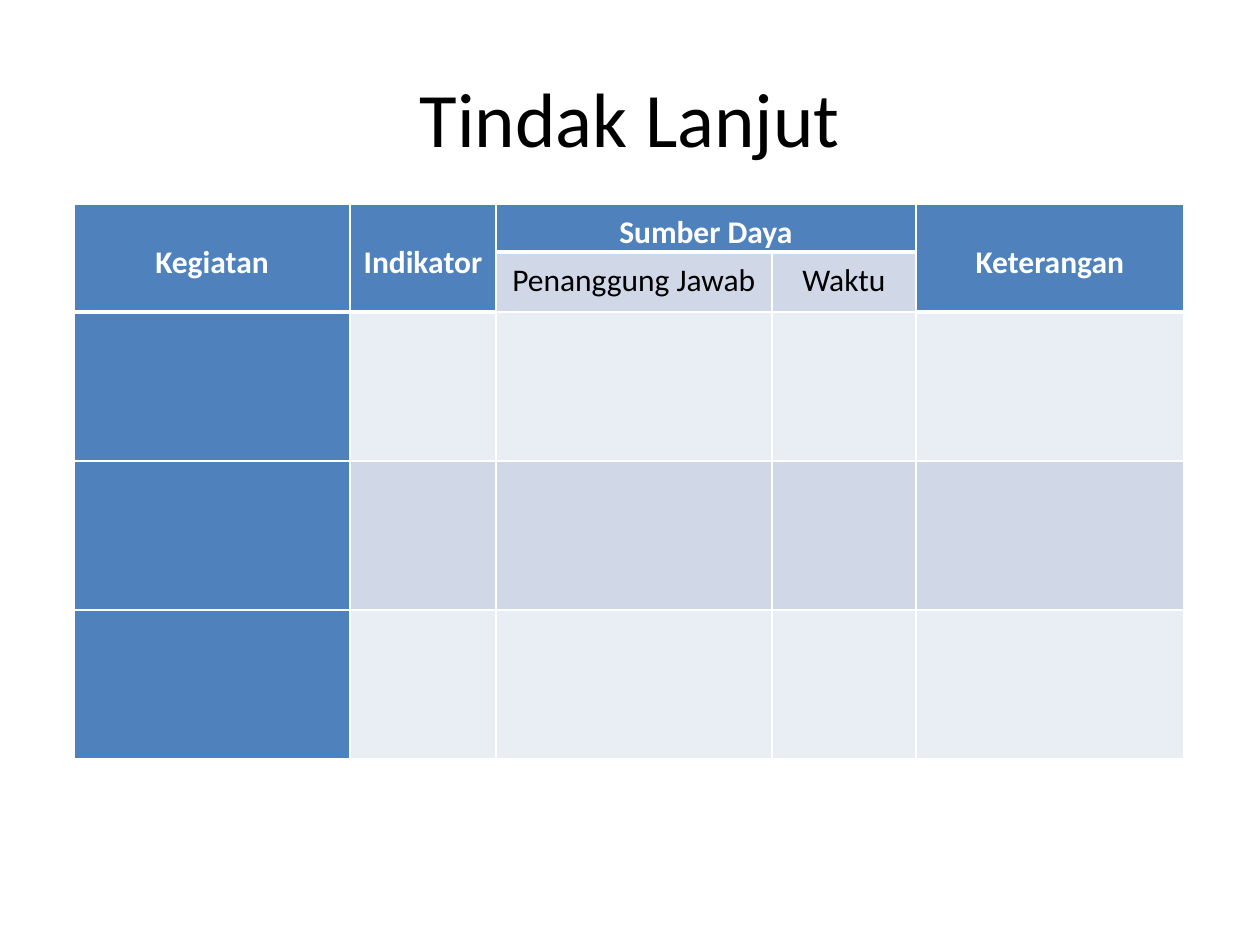
from lxml.etree import SubElement
from pptx import Presentation
from pptx.dml.color import RGBColor
from pptx.enum.text import MSO_ANCHOR, PP_ALIGN
from pptx.oxml.ns import qn
from pptx.util import Pt

PX = 914400 // 126
FONT = "Calibri"
BLACK = RGBColor(0x00, 0x00, 0x00)
WHITE = RGBColor(0xFF, 0xFF, 0xFF)
BLUE = RGBColor(0x4F, 0x81, 0xBD)
BAND_DARK = RGBColor(0xD0, 0xD8, 0xE8)
BAND_LIGHT = RGBColor(0xE9, 0xED, 0xF4)

TITLE = "Tindak Lanjut"
TITLE_BOX = (63, 38, 1134, 157)
TABLE_ORIGIN = (74, 204)
COLUMN_WIDTHS = [276, 146, 276, 144, 268]
ROW_HEIGHTS = [48, 60, 149, 149, 149]
HEADINGS = [
    # row, column, row span, column span, text
    (0, 0, 2, 1, "Kegiatan"),
    (0, 1, 2, 1, "Indikator"),
    (0, 2, 1, 2, "Sumber Daya"),
    (0, 4, 2, 1, "Keterangan"),
    (1, 2, 1, 1, "Penanggung Jawab"),
    (1, 3, 1, 1, "Waktu"),
]
HEADER_BOTTOMS = [1, 1, 0, 0, 1]


def style_text(frame, text, size, color, bold=False):
    """Write one centred paragraph."""
    frame.text = text
    para = frame.paragraphs[0]
    para.alignment = PP_ALIGN.CENTER
    font = para.runs[0].font
    font.name, font.size, font.bold = FONT, Pt(size), bold
    font.color.rgb = color
    return para


def add_border(cell, side, points):
    """Draw one white cell edge."""
    properties = cell._tc.get_or_add_tcPr()
    line = SubElement(properties, qn(f"a:ln{side}"), w=str(Pt(points)))
    fill = SubElement(line, qn("a:solidFill"))
    SubElement(fill, qn("a:srgbClr"), val=str(WHITE))


def style_cell(cell, row, column):
    """Give a cell its edges and its banded fill."""
    bottom = HEADER_BOTTOMS[column]
    in_header = row <= bottom
    add_border(cell, "L", 1)
    add_border(cell, "R", 1)
    add_border(cell, "T", 3 if row == bottom + 1 else 1)
    add_border(cell, "B", 3 if in_header else 1)
    cell.fill.solid()
    band = BAND_DARK if row % 2 else BAND_LIGHT
    cell.fill.fore_color.rgb = BLUE if in_header or column == 0 else band


def add_plan_table(page):
    """Add the follow-up table with its merged headings."""
    left, top = TABLE_ORIGIN
    area = (left, top, sum(COLUMN_WIDTHS), sum(ROW_HEIGHTS))
    table = page.shapes.add_table(
        len(ROW_HEIGHTS), len(COLUMN_WIDTHS), *[n * PX for n in area]).table
    for column, width in zip(table.columns, COLUMN_WIDTHS):
        column.width = width * PX
    for row, height in zip(table.rows, ROW_HEIGHTS):
        row.height = height * PX
    for row in range(len(ROW_HEIGHTS)):
        for column in range(len(COLUMN_WIDTHS)):
            style_cell(table.cell(row, column), row, column)
    for row, column, down, across, text in HEADINGS:
        cell = table.cell(row, column)
        if down * across > 1:
            cell.merge(table.cell(row + down - 1, column + across - 1))
        cell.margin_left = cell.margin_right = 9 * PX
        cell.margin_top = cell.margin_bottom = 0
        cell.vertical_anchor = MSO_ANCHOR.MIDDLE if down > 1 else MSO_ANCHOR.TOP
        color = WHITE if row == 0 else BLACK
        para = style_text(cell.text_frame, text, 18, color, row == 0)
        para.line_spacing = 1.25


def main():
    """Build the slide and save it."""
    deck = Presentation()
    deck.slide_width, deck.slide_height = 1260 * PX, 945 * PX
    page = deck.slides.add_slide(deck.slide_layouts[6])
    box = page.shapes.add_textbox(*[n * PX for n in TITLE_BOX])
    box.text_frame.word_wrap = True
    box.text_frame.vertical_anchor = MSO_ANCHOR.MIDDLE
    style_text(box.text_frame, TITLE, 44, BLACK)
    add_plan_table(page)
    deck.save("out.pptx")


if __name__ == "__main__":
    main()
